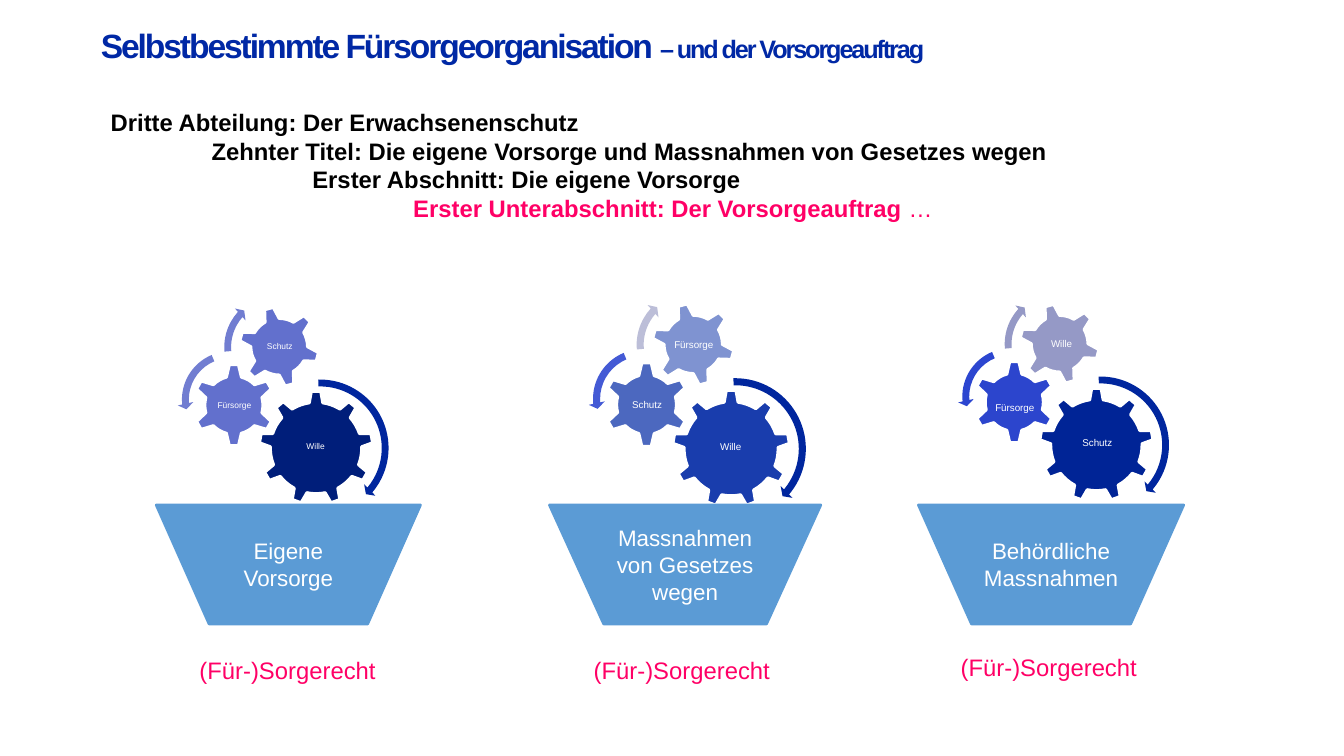
from dataclasses import dataclass

from lxml import etree
from pptx import Presentation
from pptx.dml.color import RGBColor
from pptx.enum.shapes import MSO_SHAPE
from pptx.enum.text import MSO_ANCHOR, PP_ALIGN
from pptx.oxml.ns import qn
from pptx.util import Inches, Pt

GEAR_NINE = MSO_SHAPE.GEAR_9
GEAR_SIX = MSO_SHAPE.GEAR_6
ARROW = MSO_SHAPE.CIRCULAR_ARROW
ARROW_LEFT = MSO_SHAPE.LEFT_CIRCULAR_ARROW
BUCKET = MSO_SHAPE.FLOWCHART_MANUAL_OPERATION
TOP = MSO_ANCHOR.TOP
MIDDLE = MSO_ANCHOR.MIDDLE
LEFT = PP_ALIGN.LEFT
CENTER = PP_ALIGN.CENTER


@dataclass
class Theme:
    font: str = "Arial"
    navy: str = "0028A5"
    sweep: str = "00269E"
    pink: str = "FF0066"
    sky: str = "5B9BD5"
    black: str = "000000"
    white: str = "FFFFFF"
    title: int = 24
    side: int = 18
    body: int = 17
    bucket: int = 16


def write(para, text, size, color, font=Theme.font, bold=False, track=0,
          align=LEFT, space=None, indent=0):
    para.alignment = align
    if space:
        para.line_spacing = space
    if indent:
        props = para._p.get_or_add_pPr()
        props.set("marL", str(Inches(indent)))
        props.set("indent", "0")
    run = para.add_run()
    run.text = text
    run.font.name = font
    run.font.size = Pt(size)
    run.font.bold = bold
    run.font.color.rgb = RGBColor.from_string(color)
    if track:
        run._r.get_or_add_rPr().set("spc", str(round(track * 100)))


class Deck:
    def __init__(self, theme):
        self.theme = theme
        self.file = Presentation()
        self.file.slide_width = Inches(13.33)
        self.file.slide_height = Inches(7.5)
        self.slide = self.file.slides.add_slide(self.file.slide_layouts[6])
        self.shapes = self.slide.shapes

    def box(self, place, inset=(0.1, 0.05, 0.1, 0.05), anchor=TOP, wrap=True, home=None):
        item = (home or self.shapes).add_textbox(*map(Inches, place))
        frame = item.text_frame
        frame.word_wrap = wrap
        frame.vertical_anchor = anchor
        (frame.margin_left, frame.margin_top,
         frame.margin_right, frame.margin_bottom) = map(Inches, inset)
        return frame

    def shape(self, kind, place, fill, line=None, alpha=100, home=None):
        item = (home or self.shapes).add_shape(kind, *map(Inches, place))
        item.shadow.inherit = False
        item.fill.solid()
        item.fill.fore_color.rgb = RGBColor.from_string(fill)
        if alpha < 100:
            tint = item._element.spPr.find(qn("a:solidFill"))[0]
            etree.SubElement(tint, qn("a:alpha")).set("val", str(alpha * 1000))
        if line:
            item.line.color.rgb = RGBColor.from_string(line)
            item.line.width = Pt(2)
        else:
            item.line.fill.background()
        return item

    def gear(self, home, kind, place, fill, alpha, label, size, area, turn=0):
        item = self.shape(kind, place, fill, self.theme.white, alpha, home)
        item.rotation = turn
        frame = self.box(area, (0.01,) * 4, MIDDLE, home=home)
        write(frame.paragraphs[0], label, size, self.theme.white,
              align=CENTER, space=0.9)

    def arrow(self, home, kind, place, fill, thick, angles, head):
        item = self.shape(kind, place, fill, home=home)
        values = [thick / 100, *(angle * 0.6 for angle in angles), head / 100]
        for index, value in enumerate(values):
            item.adjustments[index] = value

    def train(self, left, top, scale, size, gears, sweeps):
        home = self.shapes.add_group_shape().shapes

        def place(x, y, wide, high=None):
            return (left + x * scale, top + y * scale,
                    wide * scale, (high or wide) * scale)

        for (kind, spot, area, turn), (label, fill, alpha) in zip(GEARS, gears):
            self.gear(home, kind, place(*spot), fill, alpha, label, size,
                      place(*area), turn)
        for (kind, spot, thick, angles, head), fill in zip(ARROWS, sweeps):
            self.arrow(home, kind, place(*spot), fill, thick, angles, head)

    def bucket(self, left, width, label):
        item = self.shape(BUCKET, (left, 5.01, width, 1.18),
                          self.theme.sky, self.theme.sky)
        frame = item.text_frame
        frame.word_wrap = True
        frame.vertical_anchor = MIDDLE
        write(frame.paragraphs[0], label, self.theme.bucket, self.theme.white,
              align=CENTER)

    def note(self, left, top, text):
        frame = self.box((left, top, 1.97, 0.39), wrap=False)
        write(frame.paragraphs[0], text, self.theme.body, self.theme.pink)


GEARS = [
    (GEAR_NINE, (0, 0, 1.13), (0.22, 0.26, 0.68, 0.58), 0),
    (GEAR_SIX, (-0.66, -0.27, 0.82), (-0.45, -0.06, 0.41), 0),
    (GEAR_SIX, (-0.2, -0.84, 0.8), (-0.02, -0.66, 0.45), 345),
]
ARROWS = [
    (ARROW, (-0.12, -0.16, 1.45), 4.7, (4.98, 40.2, 268.45), 5.5),
    (ARROW_LEFT, (-0.81, -0.44, 1.05), 6.5, (7.17, 174.82, 247.3), 7.5),
    (ARROW, (-0.39, -1, 1.13), 6, (6.57, 221.9, 175.14), 7),
]


def main():
    theme = Theme()
    deck = Deck(theme)

    title = deck.box((1, 0.21, 11.34, 0.67), (0, 0.04, 0, 0)).paragraphs[0]
    write(title, "Selbstbestimmte Fürsorgeorganisation ", theme.title,
          theme.navy, bold=True, track=-1.5)
    write(title, "– und der Vorsorgeauftrag", theme.side,
          theme.navy, bold=True, track=-1.5)

    law = deck.box((1, 1.02, 11.66, 1.25))
    lines = [
        ("Dritte Abteilung: Der Erwachsenenschutz", theme.black),
        ("Zehnter Titel: Die eigene Vorsorge und Massnahmen von Gesetzes wegen", theme.black),
        ("Erster Abschnitt: Die eigene Vorsorge", theme.black),
        ("Erster Unterabschnitt: Der Vorsorgeauftrag", theme.pink),
    ]
    for level, (text, color) in enumerate(lines):
        para = law.add_paragraph() if level else law.paragraphs[0]
        write(para, text, theme.body, color, bold=True, indent=level)
    write(para, " …", theme.body, theme.pink, indent=level)

    trains = [
        (2.57, 3.88, 1, 6,
         [("Wille", "001E7A", 100), ("Fürsorge", "6270CD", 100), ("Schutz", "6270CD", 100)],
         [theme.sweep, "717DD1", "717DD1"]),
        (6.67, 3.87, 1.03, 7,
         [("Wille", theme.navy, 90), ("Schutz", theme.navy, 70), ("Fürsorge", theme.navy, 50)],
         [theme.sweep, "445AD5", "BCBED8"]),
        (10.31, 3.85, 1, 7,
         [(" Schutz", "002496", 100), (" Fürsorge", "2C45CD", 100), (" Wille", "9599C6", 100)],
         [theme.sweep, "2C46D0", "9599C6"]),
    ]
    for train in trains:
        deck.train(*train)

    for left, width, label in [
        (1.55, 2.62, "Eigene Vorsorge"),
        (5.45, 2.69, "Massnahmen von Gesetzes wegen"),
        (9.11, 2.63, "Behördliche Massnahmen"),
    ]:
        deck.bucket(left, width, label)

    for left, top in [(1.88, 6.46), (5.79, 6.46), (9.43, 6.43)]:
        deck.note(left, top, "(Für-)Sorgerecht")

    deck.file.save("out.pptx")


if __name__ == "__main__":
    main()
